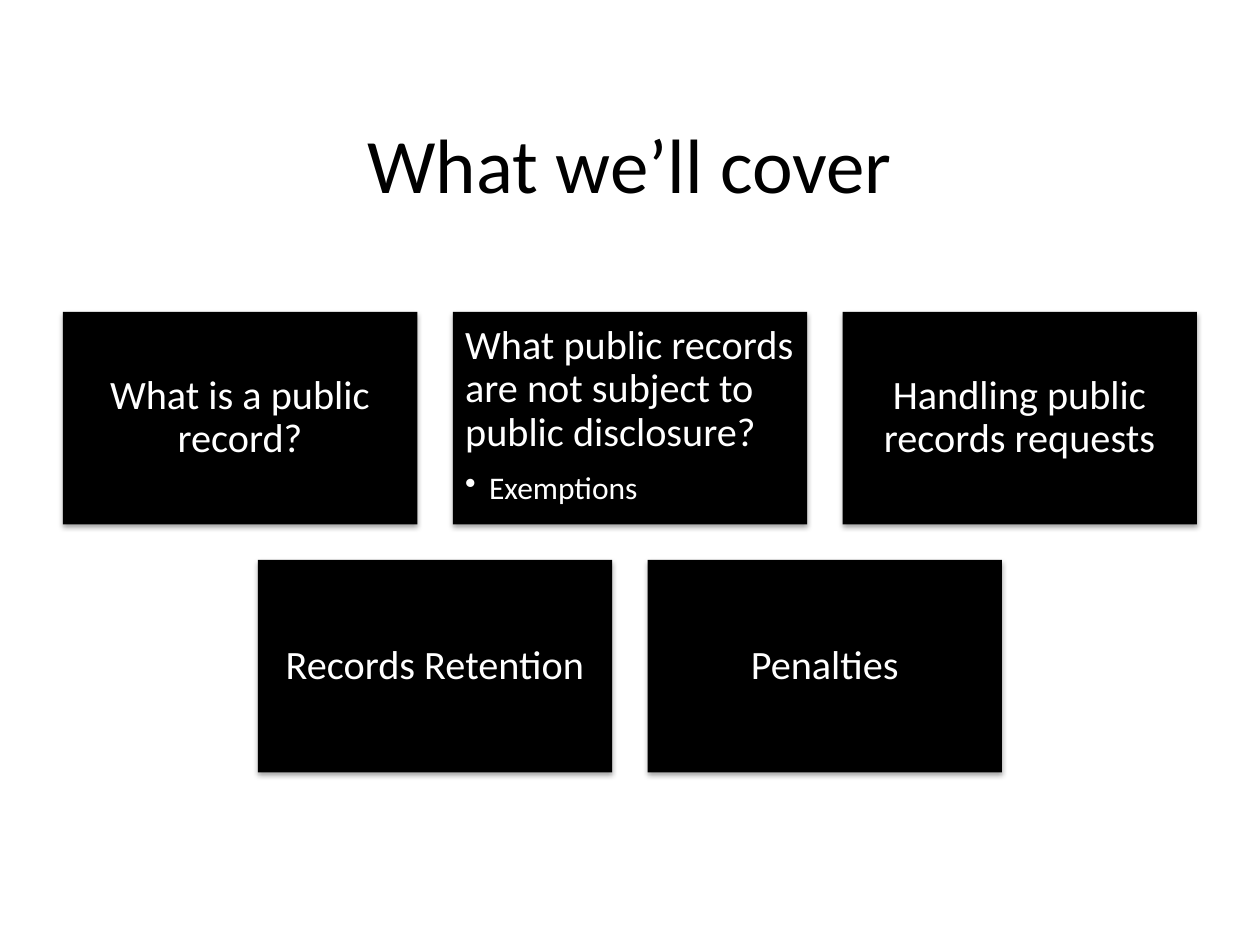
from lxml import etree
from pptx import Presentation
from pptx.dml.color import RGBColor as Rgb
from pptx.enum.shapes import MSO_SHAPE as Shape
from pptx.enum.text import MSO_ANCHOR as Anchor, PP_ALIGN as Align
from pptx.oxml import parse_xml
from pptx.oxml.ns import nsdecls, qn
from pptx.util import Inches, Pt

COLORS = {"black": "000000", "white": "FFFFFF"}
FONT = "Calibri"
TOPIC_ROWS = [
    [
        ("What is a public record?", []),
        ("What public records are not subject to public disclosure?", ["Exemptions"]),
        ("Handling public records requests", []),
    ],
    [("Records Retention", []), ("Penalties", [])],
]


def add_text(para, text, size, color):
    span = para.add_run()
    span.text = text
    span.font.name = FONT
    span.font.size = Pt(size)
    span.font.color.rgb = Rgb.from_string(COLORS[color])


deck = Presentation()
deck.slide_width, deck.slide_height = Inches(10), Inches(7.5)
page = deck.slides.add_slide(deck.slide_layouts[6])

margin = deck.slide_width * 0.05
content_width = deck.slide_width - 2 * margin
card_width = content_width / 3.2
card_height = card_width * 0.6
gap = card_width * 0.1
grid_top = deck.slide_height * 0.33

title = page.shapes.add_textbox(
    int(margin), Inches(0.83), int(content_width), Inches(0.92)
)
title.text_frame.word_wrap = True
title.text_frame.vertical_anchor = Anchor.MIDDLE
title_para = title.text_frame.paragraphs[0]
title_para.alignment = Align.CENTER
add_text(title_para, "What we’ll cover", 44, "black")

for row, topics in enumerate(TOPIC_ROWS):
    row_width = len(topics) * card_width + (len(topics) - 1) * gap
    row_left = (deck.slide_width - row_width) / 2
    top = grid_top + row * (card_height + gap)
    for column, (topic, details) in enumerate(topics):
        left = row_left + column * (card_width + gap)
        box = page.shapes.add_shape(
            Shape.RECTANGLE, int(left), int(top), int(card_width), int(card_height)
        )
        box.fill.solid()
        box.fill.fore_color.rgb = Rgb.from_string(COLORS["black"])
        box.line.fill.background()
        box.shadow.inherit = False
        effects = box._element.spPr.find(qn("a:effectLst"))
        effects.append(parse_xml(
            f'<a:outerShdw {nsdecls("a")} blurRad="{Pt(3.1)}" dist="{Pt(1.8)}" '
            f'dir="5400000" rotWithShape="0"><a:srgbClr val="{COLORS["black"]}">'
            '<a:alpha val="35000"/></a:srgbClr></a:outerShdw>'
        ))

        frame = box.text_frame
        frame.word_wrap = True
        frame.margin_left = frame.margin_right = Inches(0.1)
        frame.margin_top = frame.margin_bottom = Inches(0.1)
        frame.vertical_anchor = Anchor.TOP if details else Anchor.MIDDLE
        para = frame.paragraphs[0]
        para.alignment = Align.LEFT if details else Align.CENTER
        para.line_spacing = 0.9
        para.space_after = Pt(9.8)
        add_text(para, topic, 23, "white")

        for detail in details:
            para = frame.add_paragraph()
            para.level = 1
            para.alignment = Align.LEFT
            para.line_spacing = 0.9
            para.space_after = Pt(3.3)
            properties = para._p.get_or_add_pPr()
            properties.set("marL", str(Inches(0.19)))
            properties.set("indent", str(-Inches(0.19)))
            etree.SubElement(properties, qn("a:buChar")).set("char", "•")
            add_text(para, detail, 18, "white")

deck.save("out.pptx")
